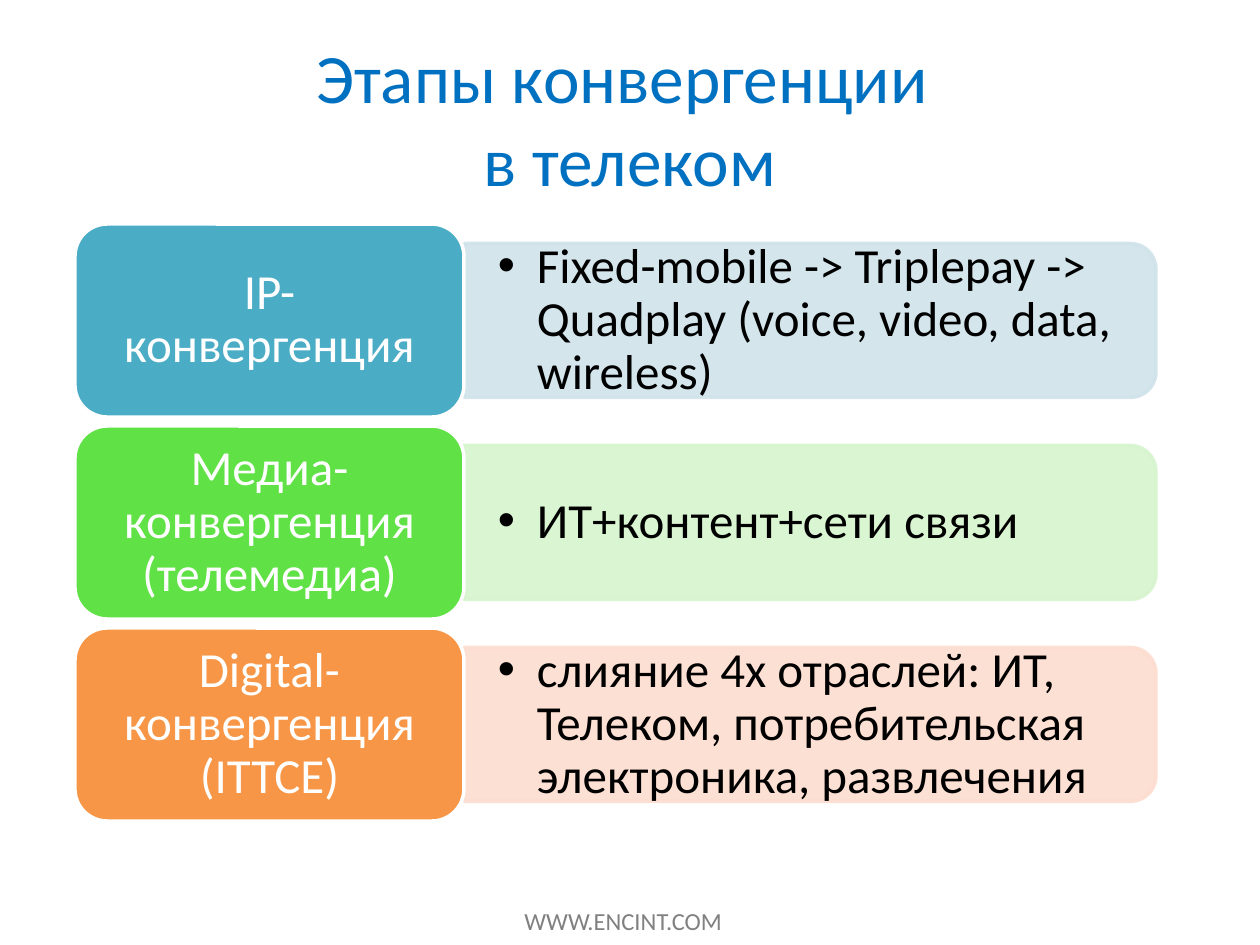
from lxml import etree
from pptx import Presentation
from pptx import util as u
from pptx.dml.color import RGBColor
from pptx.enum import shapes, text
from pptx.oxml.ns import qn

PX = 914400 / 126
MID, CENTER = text.MSO_ANCHOR.MIDDLE, text.PP_ALIGN.CENTER

# label, label colour, details, panel colour
STAGES = [
    ("IP-конвергенция", "4BACC6",
     "Fixed-mobile -> Triplepay -> Quadplay (voice, video, data, wireless)", "D0E3EA"),
    ("Медиа-конвергенция (телемедиа)", "60E146",
     "ИТ+контент+сети связи", "D6F4CE"),
    ("Digital-конвергенция (ITTCE)", "F79646",
     "слияние 4х отраслей: ИТ, Телеком, потребительская электроника, развлечения",
     "FCDDCF"),
]


def px(n):
    return u.Emu(round(n * PX))


def rgb(code):
    return RGBColor.from_string(code)


def place(item, x, y, w, h):
    item.left, item.top, item.width, item.height = map(px, (x, y, w, h))


def frame(item, padx, pady):
    body = item.text_frame
    body.word_wrap = True
    body.auto_size = text.MSO_AUTO_SIZE.NONE
    body.vertical_anchor = MID
    body.margin_left = body.margin_right = px(padx)
    body.margin_top = body.margin_bottom = px(pady)
    return body


def write(para, words, size, color):
    run = para.add_run()
    run.text = words
    run.font.name, run.font.size = "Calibri", u.Pt(size)
    run.font.color.rgb = rgb(color)


def block(slide, kind, box, fill, edge):
    item = slide.shapes.add_shape(kind, *map(px, box))
    item.shadow.inherit = False
    item.fill.solid()
    item.fill.fore_color.rgb = rgb(fill)
    item.line.color.rgb = rgb(edge)
    item.line.width = u.Pt(2)
    return item


def fade(item, share):
    for color in item._element.spPr.iter(qn("a:srgbClr")):
        etree.SubElement(color, qn("a:alpha")).set("val", str(share * 1000))


def bullet(para, indent):
    props = para._p.get_or_add_pPr()
    props.set("marL", str(px(indent)))
    props.set("indent", str(-px(indent)))
    etree.SubElement(props, qn("a:buFont")).set("typeface", "Arial")
    etree.SubElement(props, qn("a:buChar")).set("char", "•")


def heading(slide, x, y, w, h):
    title = slide.shapes.title
    place(title, x, y, w, h)
    para = frame(title, 12, 6).paragraphs[0]
    para.alignment = CENTER
    write(para, "Этапы конвергенции ", 39.6, "0070C0")
    para.add_line_break()
    write(para, "в телеком", 39.6, "0070C0")


def stage(slide, x, y, w, h, label, color, details, tint):
    lead, tall = 389, 154
    wide, mid = w - lead, y + h / 2

    # Panel: top-rounded shape turned to the right
    left = x + lead + (wide - tall) / 2
    panel = block(slide, shapes.MSO_SHAPE.ROUND_2_SAME_RECTANGLE,
                  (left, mid - wide / 2, tall, wide), tint, tint)
    panel.rotation = 90
    fade(panel, 90)

    # Details
    note = slide.shapes.add_textbox(
        *map(px, (x + lead, mid - 69, wide - 8, 138)))
    para = frame(note, 34, 18).paragraphs[0]
    para.line_spacing = 0.9
    bullet(para, 39)
    write(para, details, 28, "000000")

    # Label
    card = block(slide, shapes.MSO_SHAPE.ROUNDED_RECTANGLE,
                 (x, y, lead, h), color, "FFFFFF")
    para = frame(card, 15, 8).paragraphs[0]
    para.alignment = CENTER
    para.line_spacing = 0.9
    write(para, label, 28, "FFFFFF")


def footer(slide, x, y, w, h):
    note = slide.shapes.add_textbox(*map(px, (x, y, w, h)))
    note.text_frame.word_wrap = False
    write(note.text_frame.paragraphs[0], "WWW.ENCINT.COM", 14, "808080")


def main():
    deck = Presentation()
    deck.slide_width, deck.slide_height = px(1260), px(945)
    slide = deck.slides.add_slide(deck.slide_layouts[5])
    footer(slide, 512, 900, 224, 43)
    heading(slide, 63, 38, 1134, 158)
    for i, parts in enumerate(STAGES):
        stage(slide, 75, 224 + 202 * i, 1081, 193, *parts)
    deck.save("out.pptx")


if __name__ == "__main__":
    main()
